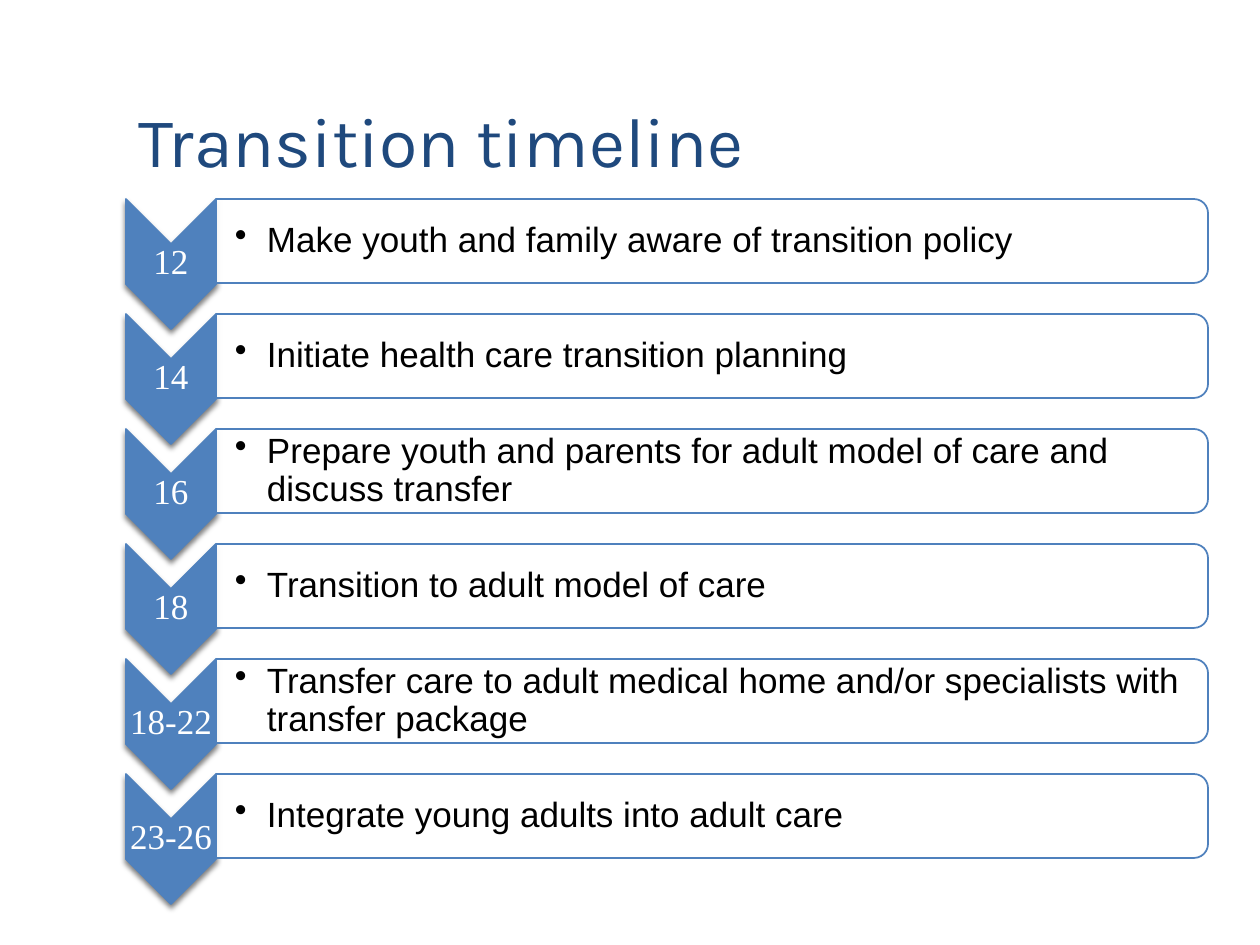
"""Build the transition timeline slide."""
from lxml.etree import SubElement
from pptx import Presentation
from pptx.dml.color import RGBColor
from pptx.enum.shapes import MSO_SHAPE
from pptx.enum.text import MSO_ANCHOR, PP_ALIGN
from pptx.oxml.ns import qn
from pptx.util import Emu, Pt

COLORS = {"title": "1F497D", "accent": "4F81BD", "panel": "FFFFFF",
          "age": "FFFFFF", "step": "000000", "shadow": "000000"}
STEPS = [
    ("12", "Make youth and family aware of transition policy"),
    ("14", "Initiate health care transition planning"),
    ("16", "Prepare youth and parents for adult model of care and discuss transfer"),
    ("18", "Transition to adult model of care"),
    ("18-22", "Transfer care to adult medical home and/or specialists with transfer package"),
    ("23-26", "Integrate young adults into adult care"),
]
PITCH = 115
FRAMES = {
    "title": {"margin_left": 13, "margin_top": 6, "margin_right": 13, "margin_bottom": 13},
    "age": {"margin_left": 1, "margin_top": 1, "margin_right": 1, "margin_bottom": 1},
    "step": {"margin_left": 20, "margin_top": 1, "margin_right": 1, "margin_bottom": 1},
}
ANCHORS = {"title": MSO_ANCHOR.BOTTOM, "age": MSO_ANCHOR.MIDDLE, "step": MSO_ANCHOR.MIDDLE}
PARAGRAPHS = {
    "title": {"alignment": PP_ALIGN.LEFT},
    "age": {"alignment": PP_ALIGN.CENTER, "line_spacing": 0.9},
    "step": {"alignment": PP_ALIGN.LEFT, "line_spacing": 0.9},
}
FONTS = {
    "title": {"name": "Karla", "size": Pt(40)},
    "age": {"name": "Times New Roman", "size": Pt(20)},
    "step": {"name": "Arial", "size": Pt(20)},
}


def px(*values):
    return [Emu(v * 914400 // 126) for v in values]


def write(sp, text, role):
    tf = sp.text_frame
    tf.word_wrap = True
    tf.vertical_anchor = ANCHORS[role]
    for name, value in FRAMES[role].items():
        setattr(tf, name, px(value)[0])
    p = tf.paragraphs[0]
    for name, value in PARAGRAPHS[role].items():
        setattr(p, name, value)
    r = p.add_run()
    r.text = text
    for name, value in FONTS[role].items():
        setattr(r.font, name, value)
    r.font.color.rgb = RGBColor.from_string(COLORS[role])
    return p


prs = Presentation()
prs.slide_width, prs.slide_height = px(1260, 945)
s = prs.slides.add_slide(prs.slide_layouts[5])

title = s.shapes.title
title.left, title.top, title.width, title.height = px(126, 38, 1071, 157)
write(title, "Transition timeline", "title")

for i, (age, step) in enumerate(STEPS):
    y = i * PITCH
    chevron = s.shapes.add_shape(MSO_SHAPE.CHEVRON, *px(106, 219 + y, 130, 90))
    age_box = s.shapes.add_textbox(*px(126, 244 + y, 90, 39))
    panel = s.shapes.add_shape(MSO_SHAPE.ROUND_2_SAME_RECTANGLE, *px(670, y - 255, 84, 992))
    step_box = s.shapes.add_textbox(*px(215, 204 + y, 988, 75))

    for sp, fill in ((chevron, "accent"), (panel, "panel")):
        sp.rotation = 90
        sp.shadow.inherit = False
        sp.fill.solid()
        sp.fill.fore_color.rgb = RGBColor.from_string(COLORS[fill])
        sp.line.color.rgb = RGBColor.from_string(COLORS["accent"])
        sp.line.width = Pt(1)

    effects = chevron._element.spPr.find(qn("a:effectLst"))
    shadow = SubElement(effects, qn("a:outerShdw"), blurRad=str(Pt(3)), dist=str(Pt(2)),
                        dir="5400000", rotWithShape="0")
    color = SubElement(shadow, qn("a:srgbClr"), val=COLORS["shadow"])
    SubElement(color, qn("a:alpha"), val="50000")
    color = panel._element.spPr.find(qn("a:solidFill"))[0]
    SubElement(color, qn("a:alpha"), val="90000")

    write(age_box, age, "age")
    pPr = write(step_box, step, "step")._p.get_or_add_pPr()
    indent = px(32)[0]
    pPr.set("marL", str(indent))
    pPr.set("indent", str(-indent))
    SubElement(pPr, qn("a:buChar"), char="•")

prs.save("out.pptx")
